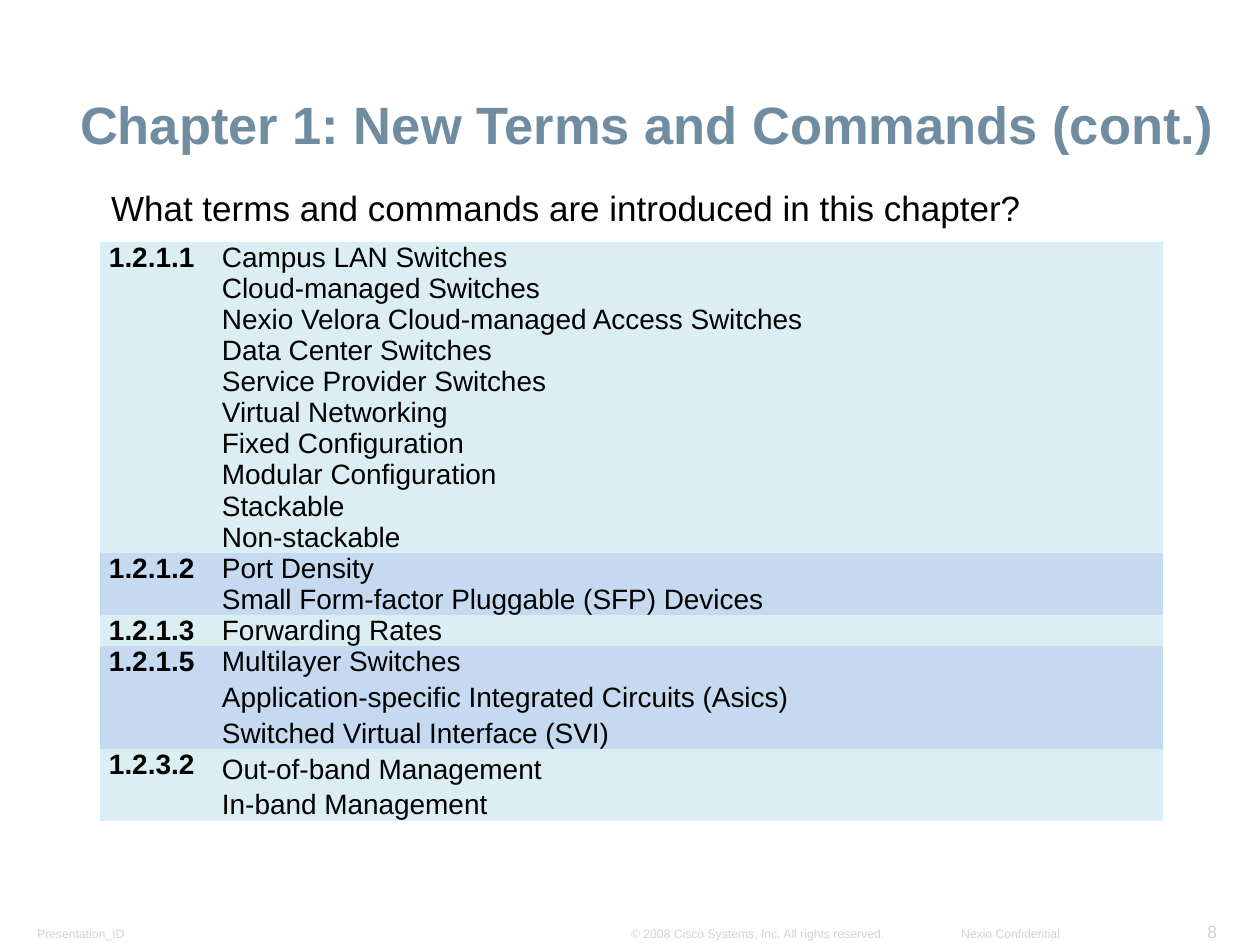
import pptx
import pptx.util
import pptx.dml.color
import pptx.enum.text
import pptx.oxml
import pptx.oxml.ns

EMU_PER_PX = 914400 / 126
FONT = "Arial"
COLORS = {
    "title": "708CA1",
    "text": "000000",
    "footer": "D3D3D3",
    "aqua": "DBEEF3",
    "blue": "C5D9F1",
}
NO_GRID_STYLE = "{2D5ABB26-0587-4C30-8999-92F81FD0307C}"
LEFT = pptx.enum.text.PP_ALIGN.LEFT
RIGHT = pptx.enum.text.PP_ALIGN.RIGHT

COLUMN_WIDTHS = [113, 950]
TERM_ROWS = [
    (281, "aqua", 1, "1.2.1.1", [
        "Campus LAN Switches",
        "Cloud-managed Switches",
        "Nexio Velora Cloud-managed Access Switches",
        "Data Center Switches",
        "Service Provider Switches",
        "Virtual Networking",
        "Fixed Configuration",
        "Modular Configuration",
        "Stackable",
        "Non-stackable",
    ]),
    (57, "blue", 1, "1.2.1.2", ["Port Density", "Small Form-factor Pluggable (SFP) Devices"]),
    (30, "aqua", 1, "1.2.1.3", ["Forwarding Rates"]),
    (31, "blue", 1, "1.2.1.5", ["Multilayer Switches"]),
    (64, "blue", 1.15, "", [
        "Application-specific Integrated Circuits (Asics)",
        "Switched Virtual Interface (SVI)",
    ]),
    (62, "aqua", 1.15, "1.2.3.2", ["Out-of-band Management", "In-band Management"]),
]
FOOTERS = [
    ((26, 920, 132, 26), "Presentation_ID", 7, LEFT),
    ((1184, 914, 44, 33), "8", 10, RIGHT),
    ((620, 920, 278, 26), "© 2008 Cisco Systems, Inc. All rights reserved.", 7, LEFT),
    ((950, 920, 121, 26), "Nexio Confidential", 7, RIGHT),
]


def px(length):
    return pptx.util.Emu(round(length * EMU_PER_PX))


def color(name):
    return pptx.dml.color.RGBColor.from_string(COLORS[name])


def place(shape, box):
    shape.left, shape.top, shape.width, shape.height = map(px, box)


def set_frame(frame, anchor, wrap=True):
    frame.auto_size = pptx.enum.text.MSO_AUTO_SIZE.NONE
    frame.word_wrap = wrap
    frame.vertical_anchor = anchor
    frame.margin_left = frame.margin_right = px(11)
    frame.margin_top = frame.margin_bottom = px(5)


def write(paragraph, text, size, tint, bold=False, spacing=1, align=LEFT):
    paragraph.alignment = align
    paragraph.line_spacing = spacing
    paragraph.space_before = pptx.util.Pt(0)
    run = paragraph.add_run()
    run.text = text
    run.font.name = FONT
    run.font.size = pptx.util.Pt(size)
    run.font.bold = bold
    run.font.color.rgb = color(tint)


def fill_title(title, box):
    place(title, box)
    set_frame(title.text_frame, pptx.enum.text.MSO_ANCHOR.BOTTOM)
    write(title.text_frame.paragraphs[0], "Chapter 1: New Terms and Commands (cont.)",
          30, "title", bold=True, spacing=0.9)


def fill_question(body, box):
    place(body, box)
    set_frame(body.text_frame, pptx.enum.text.MSO_ANCHOR.TOP)
    question = body.text_frame.paragraphs[0]
    write(question, "What terms and commands are introduced in this chapter?",
          20, "text", spacing=0.95)
    properties = question._p.get_or_add_pPr()
    properties.set("marL", "0")
    properties.set("indent", "0")
    properties.append(pptx.oxml.parse_xml(f"<a:buNone {pptx.oxml.ns.nsdecls('a')}/>"))


def fill_cell(cell, lines, tint, bold, spacing):
    cell.fill.solid()
    cell.fill.fore_color.rgb = color(tint)
    cell.margin_left = cell.margin_right = px(9)
    cell.margin_top = cell.margin_bottom = 0
    for index, line in enumerate(lines):
        frame = cell.text_frame
        paragraph = frame.add_paragraph() if index else frame.paragraphs[0]
        write(paragraph, line, 16, "text", bold, spacing)


def add_terms(slide, box):
    frame = slide.shapes.add_table(len(TERM_ROWS), len(COLUMN_WIDTHS), *map(px, box))
    terms = frame.table
    terms.first_row = terms.horz_banding = False
    style = terms._tbl.tblPr.find(pptx.oxml.ns.qn("a:tableStyleId"))
    style.text = NO_GRID_STYLE
    for column, width in zip(terms.columns, COLUMN_WIDTHS):
        column.width = px(width)
    for row, (height, tint, spacing, section, entries) in zip(terms.rows, TERM_ROWS):
        row.height = px(height)
        fill_cell(row.cells[0], [section] if section else [], tint, True, 1)
        fill_cell(row.cells[1], entries, tint, False, spacing)


def add_footer(slide, box, text, size, align):
    footer = slide.shapes.add_textbox(*map(px, box))
    set_frame(footer.text_frame, pptx.enum.text.MSO_ANCHOR.BOTTOM, wrap=False)
    write(footer.text_frame.paragraphs[0], text, size, "footer", align=align)


def main():
    deck = pptx.Presentation()
    deck.slide_width, deck.slide_height = px(1260), px(945)
    slide = deck.slides.add_slide(deck.slide_layouts[1])
    fill_title(slide.shapes.title, (69, 49, 1191, 112))
    fill_question(slide.placeholders[1], (100, 185, 1085, 68))
    add_terms(slide, (100, 242, sum(COLUMN_WIDTHS), sum(row[0] for row in TERM_ROWS)))
    for footer in FOOTERS:
        add_footer(slide, *footer)
    deck.save("out.pptx")


if __name__ == "__main__":
    main()
